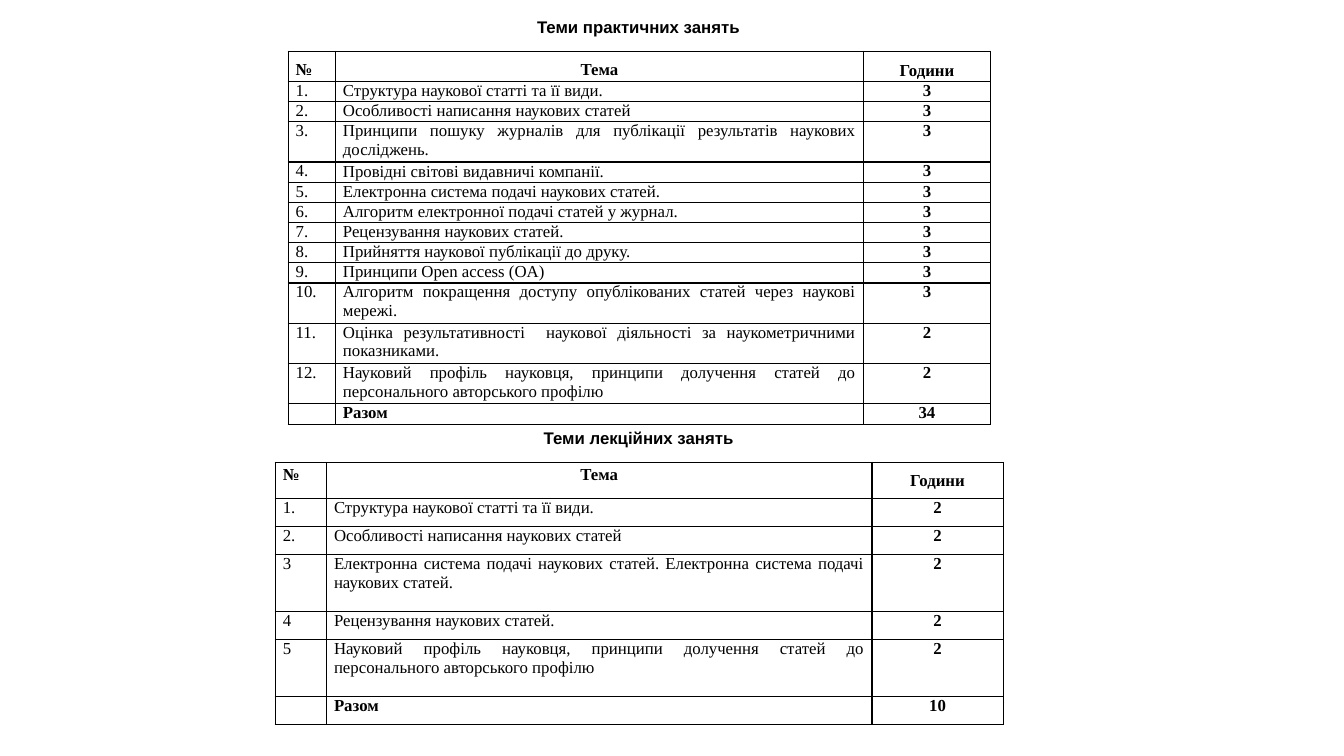
from dataclasses import dataclass

from lxml import etree
from pptx import Presentation
from pptx.dml.color import RGBColor
from pptx.enum.text import MSO_ANCHOR, MSO_AUTO_SIZE, PP_ALIGN
from pptx.oxml.ns import qn
from pptx.util import Pt

BLACK = RGBColor(0, 0, 0)
CENTER, JUSTIFY = PP_ALIGN.CENTER, PP_ALIGN.JUSTIFY
TOP, MIDDLE = MSO_ANCHOR.TOP, MSO_ANCHOR.MIDDLE
NO_AUTOFIT = MSO_AUTO_SIZE.NONE
TITLE_ONLY = 5
FONT_SIZE = Pt(12)
BORDER_WIDTH = Pt(1)
CELL_MARGIN = Pt(5.4)
HEADER = ("№", "Тема", "Години")


@dataclass
class Topic:
    number: str
    name: str
    hours: str
    lines: int = 1
    name_anchor: MSO_ANCHOR = TOP
    bold: bool = False


@dataclass
class Schedule:
    left: float
    top: float
    columns: tuple[float, float, float]
    header_height: float
    line_height: float
    header_spacing: tuple[float, float, float]
    topics: list[Topic]


LECTURES = Schedule(
    196.6, 330.4, (36.6, 389.6, 93.8), 25.5, 20.2, (1.15, 1.15, 1),
    [
        Topic("1.", "Структура наукової статті та її види.", "2"),
        Topic("2.", "Особливості написання наукових статей", "2"),
        Topic("3", "Електронна система подачі наукових статей. "
                   "Електронна система подачі наукових статей.", "2", 2),
        Topic("4", "Рецензування наукових статей.", "2"),
        Topic("5", "Науковий профіль науковця, принципи долучення статей "
                   "до персонального авторського профілю", "2", 2),
        Topic("", "Разом", "10", bold=True),
    ],
)
PRACTICALS = Schedule(
    205.8, 36.6, (33.8, 377.2, 90.8), 21.5, 14.4, (1.5, 1.5, 1.5),
    [
        Topic("1.", "Структура наукової статті та її види.", "3"),
        Topic("2.", "Особливості написання наукових статей", "3"),
        Topic("3.", "Принципи пошуку журналів для публікації результатів "
                    "наукових досліджень.", "3", 2),
        Topic("4.", "Провідні світові видавничі компанії.", "3", name_anchor=MIDDLE),
        Topic("5.", "Електронна система подачі наукових статей.", "3"),
        Topic("6.", "Алгоритм електронної подачі статей у журнал.", "3"),
        Topic("7.", "Рецензування наукових статей.", "3"),
        Topic("8.", "Прийняття наукової публікації до друку.", "3"),
        Topic("9.", "Принципи Open access (OA)", "3"),
        Topic("10.", "Алгоритм покращення доступу опублікованих статей "
                     "через наукові мережі.", "3", 2),
        Topic("11.", "Оцінка результативності  наукової діяльності "
                     "за наукометричними показниками.", "2", 2),
        Topic("12.", "Науковий профіль науковця, принципи долучення статей "
                     "до персонального авторського профілю", "2", 2),
        Topic("", "Разом", "34", bold=True),
    ],
)


def format_runs(p, font_name: str, bold: bool) -> None:
    for r in p.runs:
        r.font.name = font_name
        r.font.size = FONT_SIZE
        r.font.bold = bold
        r.font.color.rgb = BLACK


def set_heading(sp, text: str, left: float, top: float, width: float, height: float) -> None:
    sp.left, sp.top, sp.width, sp.height = Pt(left), Pt(top), Pt(width), Pt(height)
    tf = sp.text_frame
    tf.text = text
    tf.word_wrap = False
    tf.auto_size = NO_AUTOFIT
    tf.vertical_anchor = MIDDLE
    p = tf.paragraphs[0]
    p.alignment = CENTER
    p.line_spacing = 1.0
    format_runs(p, "Arial", True)


def add_borders(cell) -> None:
    properties = cell._tc.get_or_add_tcPr()
    for side in ("lnL", "lnR", "lnT", "lnB"):
        line = etree.SubElement(properties, qn(f"a:{side}"), w=str(BORDER_WIDTH))
        fill = etree.SubElement(line, qn("a:solidFill"))
        etree.SubElement(fill, qn("a:srgbClr"), val=str(BLACK))


def fill_cell(cell, text: str, alignment: PP_ALIGN, bold: bool, anchor: MSO_ANCHOR = TOP):
    """Write and format one cell and return its paragraph."""
    add_borders(cell)
    cell.fill.background()
    cell.margin_left = cell.margin_right = CELL_MARGIN
    cell.margin_top = cell.margin_bottom = 0
    cell.vertical_anchor = anchor
    p = cell.text_frame.paragraphs[0]
    p.alignment = alignment
    if text:
        p.text = text
        format_runs(p, "Times New Roman", bold)
    else:
        # Keeps the row as low as the others
        p._p.get_or_add_endParaRPr().set("sz", str(int(FONT_SIZE.pt * 100)))
    return p


def add_schedule(slide, schedule: Schedule) -> None:
    heights = [schedule.header_height]
    heights += [schedule.line_height * topic.lines for topic in schedule.topics]
    table = slide.shapes.add_table(
        len(heights), len(HEADER), Pt(schedule.left), Pt(schedule.top),
        Pt(sum(schedule.columns)), Pt(sum(heights)),
    ).table
    table.first_row = table.horz_banding = False
    for column, width in zip(table.columns, schedule.columns):
        column.width = Pt(width)
    for row, height in zip(table.rows, heights):
        row.height = Pt(height)

    formats = zip(HEADER, (JUSTIFY, CENTER, CENTER), (TOP, TOP, MIDDLE), schedule.header_spacing)
    for col, (text, alignment, anchor, spacing) in enumerate(formats):
        p = fill_cell(table.cell(0, col), text, alignment, True, anchor)
        p.line_spacing = float(spacing)
        if text == "Тема":
            p.space_after = Pt(10)

    for row, topic in enumerate(schedule.topics, start=1):
        fill_cell(table.cell(row, 0), topic.number, JUSTIFY, False)
        fill_cell(table.cell(row, 1), topic.name, JUSTIFY, topic.bold, topic.name_anchor)
        fill_cell(table.cell(row, 2), topic.hours, CENTER, True)


def main() -> None:
    prs = Presentation()
    prs.slide_width, prs.slide_height = Pt(960), Pt(540)
    slide = prs.slides.add_slide(prs.slide_layouts[TITLE_ONLY])
    set_heading(slide.shapes.title, "Теми практичних занять", 375.8, 8, 160.6, 21.6)
    lecture_heading = slide.shapes.add_textbox(0, 0, 0, 0)
    set_heading(lecture_heading, "Теми лекційних занять", -23.8, 294.5, 960, 36)
    add_schedule(slide, LECTURES)
    add_schedule(slide, PRACTICALS)
    prs.save("out.pptx")


if __name__ == "__main__":
    main()
